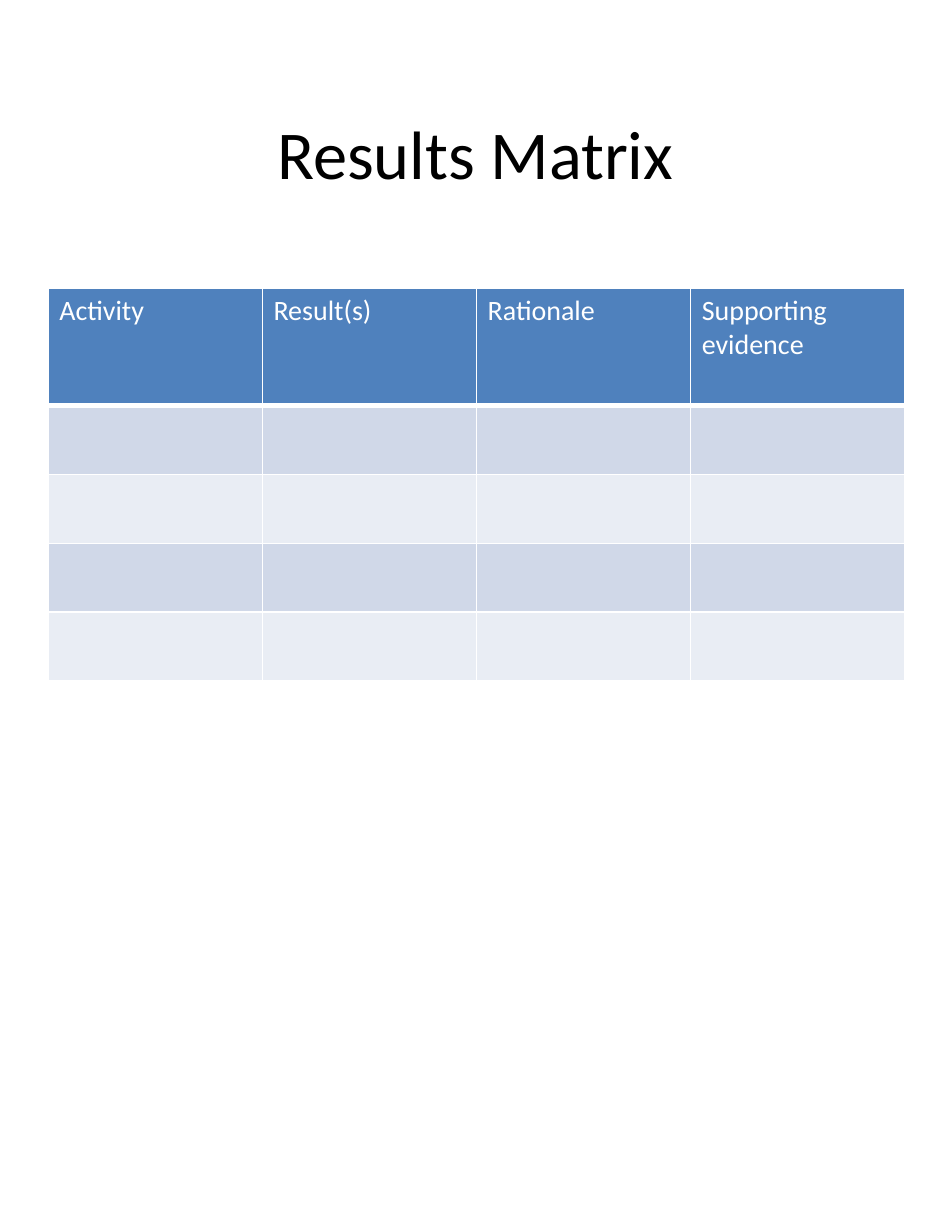
from lxml.etree import SubElement
from pptx import Presentation
from pptx.dml.color import RGBColor
from pptx.enum.text import MSO_ANCHOR, PP_ALIGN
from pptx.oxml.ns import qn
from pptx.util import Inches, Pt

COLORS = {
    "text": "000000",
    "white": "FFFFFF",
    "header": "4F81BD",
    "band_dark": "D0D8E8",
    "band_light": "E9EDF4",
}
HEADINGS = ["Activity", "Result(s)", "Rationale", "Supporting evidence"]
BODY_ROWS = 4


class SlideBuilder:
    font = "Calibri"

    def __init__(self, prs):
        # Layout 5 is "Title Only"
        self.s = prs.slides.add_slide(prs.slide_layouts[5])

    def color(self, name):
        return RGBColor.from_string(COLORS[name])

    def format_text(self, tf, size, color):
        for p in tf.paragraphs:
            for r in p.runs:
                r.font.name = self.font
                r.font.size = Pt(size)
                r.font.bold = False
                r.font.color.rgb = self.color(color)

    def title(self, text, left, top, width, height):
        sp = self.s.shapes.title
        sp.left, sp.top = Inches(left), Inches(top)
        sp.width, sp.height = Inches(width), Inches(height)
        tf = sp.text_frame
        tf.text = text
        tf.vertical_anchor = MSO_ANCHOR.MIDDLE
        tf.paragraphs[0].alignment = PP_ALIGN.CENTER
        self.format_text(tf, 44, "text")

    def cell_borders(self, cell, top, bottom):
        tc_pr = cell._tc.get_or_add_tcPr()
        for side, width in (("L", 1), ("R", 1), ("T", top), ("B", bottom)):
            ln = SubElement(tc_pr, qn(f"a:ln{side}"), w=str(Pt(width)))
            fill = SubElement(ln, qn("a:solidFill"))
            SubElement(fill, qn("a:srgbClr"), val=COLORS["white"])

    def matrix(self, headings, body_rows, left, top, width, head_h, row_h):
        heights = [head_h] + [row_h] * body_rows
        table = self.s.shapes.add_table(
            len(heights), len(headings), Inches(left), Inches(top),
            Inches(width), Inches(sum(heights))).table

        for i, height in enumerate(heights):
            table.rows[i].height = Inches(height)
            band = "band_dark" if i % 2 else "band_light"
            for cell in table.rows[i].cells:
                # The rule under the header row is thicker
                self.cell_borders(cell, 3 if i == 1 else 1, 3 if i == 0 else 1)
                cell.fill.solid()
                cell.fill.fore_color.rgb = self.color(band if i else "header")

        for cell, heading in zip(table.rows[0].cells, headings):
            cell.text_frame.text = heading
            self.format_text(cell.text_frame, 18, "white")


def main():
    prs = Presentation()
    prs.slide_width, prs.slide_height = Inches(8.5), Inches(11)
    slide = SlideBuilder(prs)

    # Title
    slide.title("Results Matrix", 0.42, 0.44, 7.65, 1.83)

    # Results table
    slide.matrix(HEADINGS, BODY_ROWS, left=0.43, top=2.57, width=7.65,
                 head_h=1.05, row_h=0.615)

    prs.save("out.pptx")


if __name__ == "__main__":
    main()
